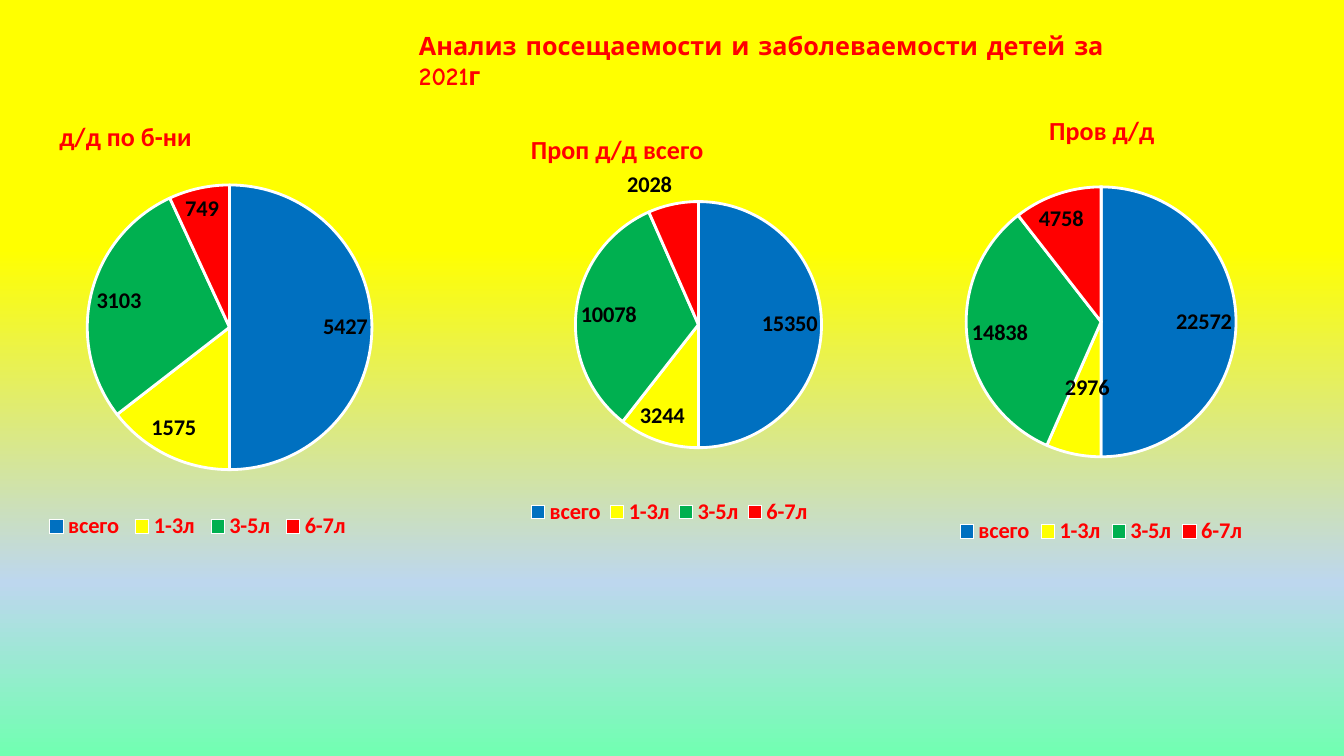
import pptx
import pptx.util
import pptx.oxml
import pptx.chart.data
import pptx.dml.color
import pptx.enum.chart
import pptx.enum.text
from pptx.util import Cm, Pt

RED = "FF0000"
BLACK = "000000"
AGE_COLOURS = {"всего": "0070C0", "1-3л": "FFFF00", "3-5л": "00B050", "6-7л": RED}
BACKGROUND_STOPS = [(33, "FFFF00"), (77, "BDD7EE"), (100, "71FFB1"), (100, "CEE1F2")]
LabelPosition = pptx.enum.chart.XL_LABEL_POSITION


def style(font, size, colour, face="Calibri", bold=True):
    font.size = Pt(size)
    font.bold = bold
    font.name = face
    font.color.rgb = pptx.dml.color.RGBColor.from_string(colour)


def place(part, index, **fractions):
    """Pin a chart part at fractions of the chart's size; index is the layout's place among its children."""
    for old_layout in part.findall(pptx.oxml.ns.qn("c:layout")):
        part.remove(old_layout)
    target = '<c:layoutTarget val="inner"/>' if part.tag.endswith("plotArea") else ""
    modes = "".join(f'<c:{key}Mode val="edge"/>' for key in fractions if key in "xy")
    values = "".join(f'<c:{key} val="{value}"/>' for key, value in fractions.items())
    part.insert(index, pptx.oxml.parse_xml(
        f'<c:layout {pptx.oxml.ns.nsdecls("c")}><c:manualLayout>'
        f"{target}{modes}{values}</c:manualLayout></c:layout>"))


presentation = pptx.Presentation()
presentation.slide_width = Cm(33.87)
presentation.slide_height = Cm(19.05)
slide = presentation.slides.add_slide(presentation.slide_layouts[6])

# Background gradient
background = slide.background.fill
background.gradient()
background.gradient_angle = 270
stop_list = slide._element.find(".//" + pptx.oxml.ns.qn("a:gsLst"))
for default_stop in list(stop_list):
    stop_list.remove(default_stop)
for percent, colour in BACKGROUND_STOPS:
    stop_list.append(pptx.oxml.parse_xml(
        f'<a:gs {pptx.oxml.ns.nsdecls("a")} pos="{percent * 1000}"><a:srgbClr val="{colour}"/></a:gs>'))

# Heading
heading = slide.shapes.add_textbox(Cm(10.31), Cm(0.64), Cm(18.85), Cm(1.02)).text_frame
heading.word_wrap = True
heading.auto_size = pptx.enum.text.MSO_AUTO_SIZE.SHAPE_TO_FIT_TEXT
heading_run = heading.paragraphs[0].add_run()
heading_run.text = "Анализ посещаемости и заболеваемости детей за 2021г"
style(heading_run.font, 18, RED, "Comic Neue")

# title, series name, values, frame in cm, title corner, pie box, legend box, moved labels
pies = [
    ("д/д по б-ни", "д/д по б-ни", (5427, 1575, 3103, 749), (0, 1.91, 11.46, 11.96),
     (0.12, 0.08), (0.19, 0.23, 0.63, 0.6), (0.09, 0.91, 0.69, 0.08), {}),
    ("Проп д/д всего", "Series 1", (15350, 3244, 10078, 2028), (11.23, 2.41, 11.28, 11.1),
     (0.18, 0.07), (0.29, 0.24, 0.55, 0.56), (0.17, 0.9, 0.66, 0.09),
     {3: LabelPosition.OUTSIDE_END}),
    ("Пров д/д", "Пров д/д", (22572, 2976, 14838, 4758), (22.25, 2.13, 11, 11.73),
     (0.37, 0.05), (0.19, 0.22, 0.62, 0.58), (0.15, 0.92, 0.7, 0.08),
     {1: LabelPosition.CENTER}),
]

for title, series_name, days, frame, title_at, pie_box, legend_box, moved_labels in pies:
    data = pptx.chart.data.CategoryChartData()
    data.categories = list(AGE_COLOURS)
    data.add_series(series_name, days)
    chart = slide.shapes.add_chart(
        pptx.enum.chart.XL_CHART_TYPE.PIE, *map(Cm, frame), data).chart
    style(chart.font, 10, BLACK, bold=False)

    chart.has_title = True
    title_run = chart.chart_title.text_frame.paragraphs[0].add_run()
    title_run.text = title
    style(title_run.font, 18.6, RED)
    chart.chart_title.include_in_layout = False
    place(chart.chart_title._element, 1, **dict(zip("xy", title_at)))

    chart.has_legend = True
    chart.legend.position = pptx.enum.chart.XL_LEGEND_POSITION.BOTTOM
    chart.legend.include_in_layout = False
    style(chart.legend.font, 16, RED)
    place(chart.legend._element, 1, **dict(zip("xywh", legend_box)))

    pie = chart.plots[0]
    pie.vary_by_categories = True
    place(pie._element.getparent(), 0, **dict(zip("xywh", pie_box)))
    ages = pie.series[0]
    for index, colour in enumerate(AGE_COLOURS.values()):
        sector = ages.points[index].format
        sector.fill.solid()
        sector.fill.fore_color.rgb = pptx.dml.color.RGBColor.from_string(colour)
        sector.line.color.rgb = pptx.dml.color.RGBColor.from_string("FFFFFF")
        sector.line.width = Pt(2)

    labels = ages.data_labels
    labels.show_value = True
    labels.show_percentage = False
    labels.position = LabelPosition.BEST_FIT
    style(labels.font, 16, BLACK)
    for index, position in moved_labels.items():
        label = ages.points[index].data_label
        style(label.font, 16, BLACK)
        label.position = position

presentation.save("out.pptx")
